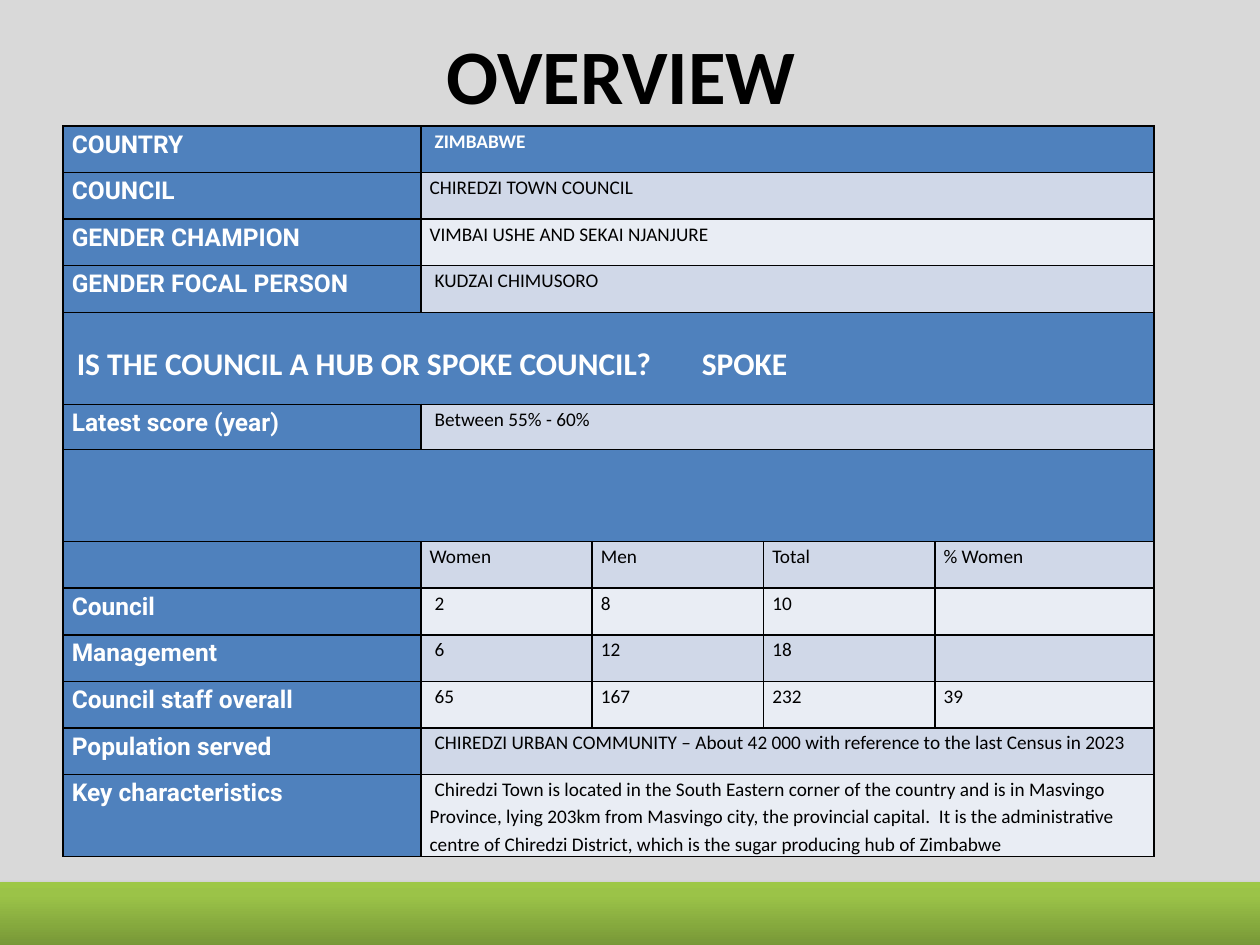
"""Build the council overview slide with its profile table."""
import copy

import pptx
import pptx.dml.color
import pptx.enum.shapes
import pptx.enum.text
import pptx.oxml
import pptx.oxml.ns
import pptx.util

Inches = pptx.util.Inches
Pt = pptx.util.Pt

COLORS = {
    "background": "D9D9D9", "header": "4F81BD", "dark_band": "D0D8E8",
    "light_band": "E9EDF4", "black": "000000", "white": "FFFFFF",
}
BAND_STOPS = [(0, "779737"), (0.8, "9BC348"), (1, "9DC746")]
LABEL = {"name": "Roboto", "size": Pt(14), "bold": True}
VALUE = {"name": "Calibri", "size": Pt(11), "bold": False}
COUNTRY = {"name": "Calibri", "size": Pt(11), "bold": True}
QUESTION = {"name": "Calibri", "size": Pt(18), "bold": True}
TITLE = {"name": "Calibri", "size": Pt(44), "bold": True}
MARGINS = {
    "margin_left": Inches(0.07), "margin_right": Inches(0.07),
    "margin_top": 0, "margin_bottom": 0,
}
COLUMN_WIDTHS = [2.84, 1.36, 1.36, 1.36, 1.74]
ROW_HEIGHT = 0.37
SPECIAL_HEIGHTS = {4: 0.73, 5: 0.36, 6: 0.73, 12: 0.65}
SPOKE_TAB = 5.72
VALUE_INDENT = 0.04
INDENTED_ROWS = {0, 3, 5, 8, 9, 10, 11, 12}
QUESTION_ROW = 4
ROWS = [
    ["COUNTRY", "ZIMBABWE"],
    ["COUNCIL", "CHIREDZI TOWN COUNCIL"],
    ["GENDER CHAMPION", "VIMBAI USHE AND SEKAI NJANJURE"],
    ["GENDER FOCAL PERSON", "KUDZAI CHIMUSORO"],
    ["IS THE COUNCIL A HUB OR SPOKE COUNCIL?\tSPOKE"],
    ["Latest score (year)", "Between 55% - 60%"],
    [""],
    ["", "Women", "Men", "Total", "% Women"],
    ["Council", "2", "8", "10", ""],
    ["Management", "6", "12", "18", ""],
    ["Council staff overall", "65", "167", "232", "39"],
    ["Population served",
     "CHIREDZI URBAN COMMUNITY – About 42 000 with reference to the last Census in 2023"],
    ["Key characteristics",
     "Chiredzi Town is located in the South Eastern corner of the country and is in "
     "Masvingo Province, lying 203km from Masvingo city, the provincial capital.  "
     "It is the administrative centre of Chiredzi District, which is the sugar "
     "producing hub of Zimbabwe"],
]


def rgb(color):
    """Return the named colour."""
    return pptx.dml.color.RGBColor.from_string(COLORS[color])


def apply(target, values):
    """Set each attribute of the target from a dict."""
    for attribute, value in values.items():
        setattr(target, attribute, value)


def write(paragraph, text, style, color):
    """Add one formatted run to a paragraph."""
    run = paragraph.add_run()
    run.text = text
    apply(run.font, style)
    run.font.color.rgb = rgb(color)


def add_title(slide):
    """Add the centred slide title."""
    title = slide.shapes.add_textbox(Inches(0.5), Inches(0.17), Inches(9), Inches(0.83))
    apply(title.text_frame, {
        "word_wrap": True, "vertical_anchor": pptx.enum.text.MSO_ANCHOR.MIDDLE})
    heading = title.text_frame.paragraphs[0]
    heading.alignment = pptx.enum.text.PP_ALIGN.CENTER
    write(heading, "OVERVIEW ", TITLE, "black")


def outline_cell(cell):
    """Draw a thin black border on all four sides of a cell."""
    properties = cell._tc.get_or_add_tcPr()
    for position, side in enumerate(("lnL", "lnR", "lnT", "lnB")):
        border = pptx.oxml.parse_xml(
            f'<a:{side} {pptx.oxml.ns.nsdecls("a")} w="{Pt(1)}"><a:solidFill>'
            f'<a:srgbClr val="{COLORS["black"]}"/></a:solidFill></a:{side}>')
        properties.insert(position, border)


def fill_cell(cell, fill):
    """Give a cell its margins, fill and border."""
    apply(cell, MARGINS)
    cell.fill.solid()
    cell.fill.fore_color.rgb = rgb(fill)
    outline_cell(cell)


def write_cell(cell, text, style, color, indent=0):
    """Write a cell's paragraph, with an optional first-line indent."""
    paragraph = cell.text_frame.paragraphs[0]
    paragraph.line_spacing = 1.15
    if indent:
        paragraph._p.get_or_add_pPr().set("indent", str(Inches(indent)))
    write(paragraph, text, style, color)


def place_spoke_answer(cell):
    """Lower the question line and set the tab stop of its answer."""
    cell.margin_top = Inches(0.22)
    properties = cell.text_frame.paragraphs[0]._p.get_or_add_pPr()
    properties.append(pptx.oxml.parse_xml(
        f'<a:tabLst {pptx.oxml.ns.nsdecls("a")}>'
        f'<a:tab pos="{Inches(SPOKE_TAB)}" algn="l"/></a:tabLst>'))


def add_profile_table(slide):
    """Add the council profile table."""
    heights = [SPECIAL_HEIGHTS.get(row, ROW_HEIGHT) for row in range(len(ROWS))]
    profile = slide.shapes.add_table(
        len(ROWS), len(COLUMN_WIDTHS), Inches(0.5), Inches(1),
        Inches(sum(COLUMN_WIDTHS)), Inches(sum(heights))).table
    apply(profile, {"first_row": False, "horz_banding": False})
    for column, width in zip(profile.columns, COLUMN_WIDTHS):
        column.width = Inches(width)
    last = len(COLUMN_WIDTHS) - 1
    for row, texts in enumerate(ROWS):
        profile.rows[row].height = Inches(heights[row])
        band = "dark_band" if row % 2 else "light_band"
        for column in range(last + 1):
            is_header = row == 0 or column == 0 or len(texts) == 1
            fill_cell(profile.cell(row, column), "header" if is_header else band)
        if len(texts) <= 2:
            profile.cell(row, len(texts) - 1).merge(profile.cell(row, last))
        for column, text in enumerate(texts):
            if not text:
                continue
            cell = profile.cell(row, column)
            if row == QUESTION_ROW:
                write_cell(cell, text, QUESTION, "white", VALUE_INDENT)
                place_spoke_answer(cell)
            elif column == 0:
                write_cell(cell, text, LABEL, "white")
            else:
                indent = VALUE_INDENT if column == 1 and row in INDENTED_ROWS else 0
                style, color = (COUNTRY, "white") if row == 0 else (VALUE, "black")
                write_cell(cell, text, style, color, indent)


def add_footer_band(slide):
    """Add the green gradient band along the bottom."""
    band = slide.shapes.add_shape(
        pptx.enum.shapes.MSO_SHAPE.RECTANGLE, 0, Inches(7), Inches(10.21), Inches(0.51))
    band.line.fill.background()
    band.fill.gradient()
    band.fill.gradient_angle = 90
    stop_list = band.fill._fill._gradFill.gsLst
    stop_list.append(copy.deepcopy(stop_list[-1]))
    for stop, (position, color) in zip(band.fill.gradient_stops, BAND_STOPS):
        stop.position = position
        stop.color.rgb = pptx.dml.color.RGBColor.from_string(color)
    band.shadow.inherit = False
    effects = band._element.spPr.find(pptx.oxml.ns.qn("a:effectLst"))
    effects.append(pptx.oxml.parse_xml(
        f'<a:outerShdw {pptx.oxml.ns.nsdecls("a")} blurRad="{Pt(3.1)}" '
        f'dist="{Pt(1.8)}" dir="5400000"><a:srgbClr val="{COLORS["black"]}">'
        '<a:alpha val="35000"/></a:srgbClr></a:outerShdw>'))


def main():
    """Build and save the slide."""
    deck = pptx.Presentation()
    apply(deck, {"slide_width": Inches(10), "slide_height": Inches(7.5)})
    slide = deck.slides.add_slide(deck.slide_layouts[6])
    slide.background.fill.solid()
    slide.background.fill.fore_color.rgb = rgb("background")
    add_title(slide)
    add_profile_table(slide)
    add_footer_band(slide)
    deck.save("out.pptx")


if __name__ == "__main__":
    main()
